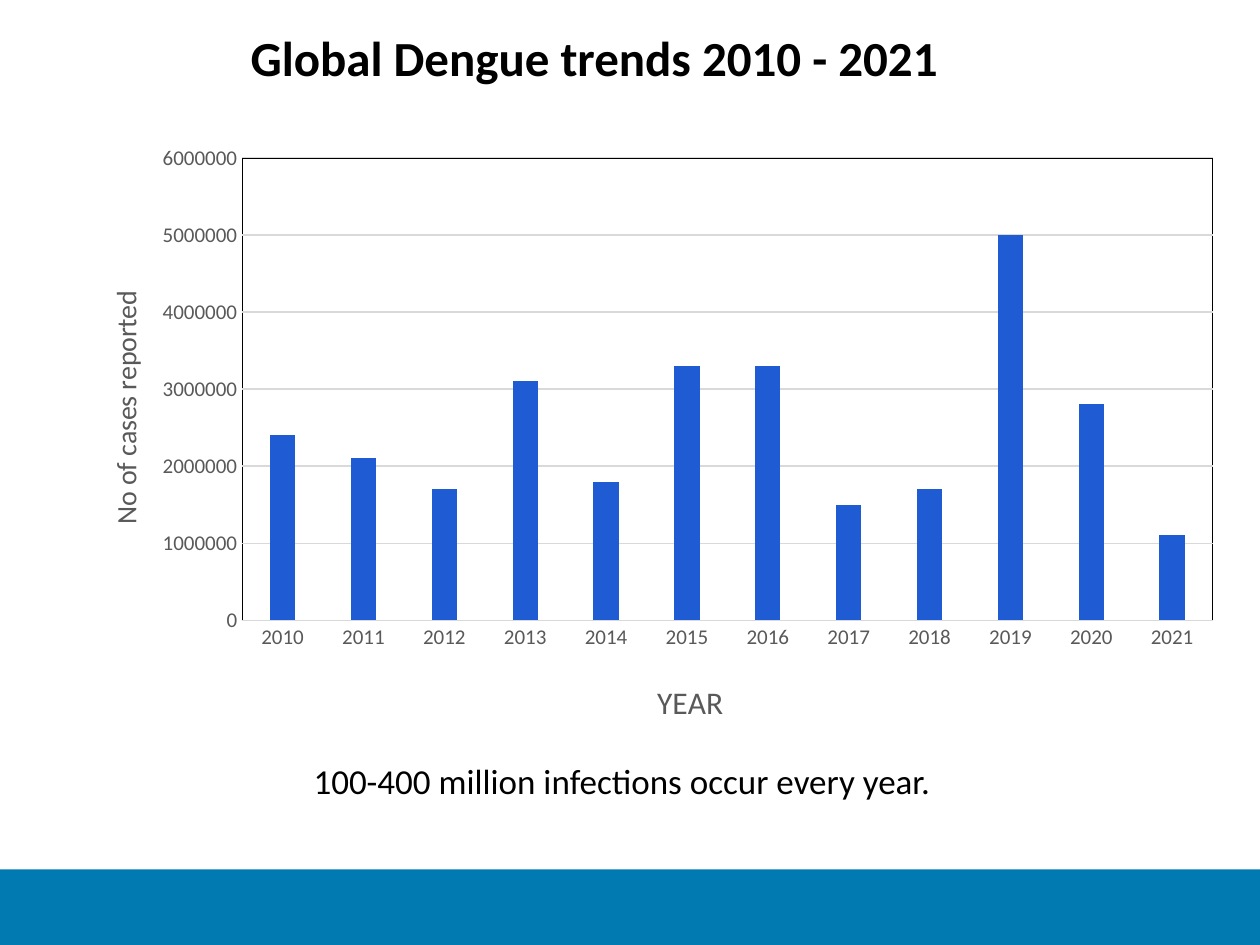
"""Build the slide on global dengue trends from 2010 to 2021."""
from lxml import etree
from pptx import Presentation
from pptx.chart.data import CategoryChartData
from pptx.dml.color import RGBColor
from pptx.enum.chart import XL_CHART_TYPE, XL_TICK_MARK
from pptx.enum.shapes import MSO_SHAPE
from pptx.enum.text import MSO_AUTO_SIZE, PP_ALIGN
from pptx.oxml import parse_xml
from pptx.oxml.ns import nsdecls, qn
from pptx.util import Inches, Pt

COLUMN = XL_CHART_TYPE.COLUMN_CLUSTERED
NONE = XL_TICK_MARK.NONE
RECT = MSO_SHAPE.RECTANGLE
GROW = MSO_AUTO_SIZE.SHAPE_TO_FIT_TEXT
LEFT, CENTER = PP_ALIGN.LEFT, PP_ALIGN.CENTER

FONT = "Calibri"
COLORS = {"band": "007AB0", "bar": "1F5BD3", "grid": "D9D9D9",
          "label": "595959", "text": "000000"}
TITLE = "Global Dengue trends 2010 - 2021"
NOTE = "100-400 million infections occur every year."
YEARS = [str(year) for year in range(2010, 2022)]
CASES = [2400000, 2100000, 1700000, 3100000, 1800000, 3300000,
         3300000, 1500000, 1700000, 5000000, 2800000, 1100000]
PLOT = {"x": 0.15, "y": 0.04, "w": 0.83, "h": 0.76}


def color(name):
    return RGBColor.from_string(COLORS[name])


def style(font, size, tone="text", bold=False):
    font.name, font.size, font.bold = FONT, Pt(size), bold
    font.color.rgb = color(tone)


def add_text(slide, text, box, size, bold=False, align=LEFT, wrap=True):
    frame = slide.shapes.add_textbox(*map(Inches, box)).text_frame
    frame.word_wrap, frame.auto_size = wrap, GROW
    para = frame.paragraphs[0]
    para.alignment = align
    run = para.add_run()
    run.text = text
    style(run.font, size, bold=bold)


def layout(spots, inner=False):
    root = parse_xml(f"<c:layout {nsdecls('c')}><c:manualLayout/></c:layout>")
    rules = [("layoutTarget", "inner")] if inner else []
    rules += [("xMode", "edge"), ("yMode", "edge"), *spots.items()]
    for tag, val in rules:
        etree.SubElement(root[0], qn(f"c:{tag}")).set("val", str(val))
    return root


def set_axis(axis, text, size, spot):
    axis.major_tick_mark = axis.minor_tick_mark = NONE
    style(axis.tick_labels.font, 12, "label")
    title = axis.axis_title
    para = title.text_frame.paragraphs[0]
    run = para.add_run()
    run.text = text
    style(run.font, size, "label")
    node = title._element
    for old in node.findall(qn("c:layout")):
        node.remove(old)
    node.find(qn("c:tx")).addnext(layout(spot))


def add_cases(slide):
    data = CategoryChartData()
    data.categories = YEARS
    data.add_series("Series 1", CASES)
    box = map(Inches, (0.53, 1.06, 9.28, 4.83))
    chart = slide.shapes.add_chart(COLUMN, *box, data).chart
    chart.has_legend = chart.has_title = False
    style(chart.font, 10)
    plot = chart.plots[0]
    plot.gap_width, plot.overlap, plot.vary_by_categories = 219, -27, False
    fill = plot.series[0].format.fill
    fill.solid()
    fill.fore_color.rgb = color("bar")

    years, cases = chart.category_axis, chart.value_axis
    set_axis(years, "YEAR", 18, {"x": 0.5, "y": 0.89})
    set_axis(cases, "No of cases reported", 16, {"x": 0.03, "y": 0.25})
    cases.minimum_scale, cases.maximum_scale = 0, 6000000
    cases.major_unit = 1000000
    cases.tick_labels.number_format = "0"
    cases.tick_labels.number_format_is_linked = False
    cases.format.line.fill.background()
    for line in (years.format.line, cases.major_gridlines.format.line):
        line.color.rgb, line.width = color("grid"), Pt(0.75)

    area = chart._chartSpace.chart.plotArea
    for old in area.findall(qn("c:layout")):
        area.remove(old)
    area.insert(0, layout(PLOT, inner=True))
    area.append(parse_xml(
        f"<c:spPr {nsdecls('c', 'a')}><a:noFill/><a:ln w='9525'><a:solidFill>"
        f"<a:srgbClr val='{COLORS['text']}'/></a:solidFill></a:ln></c:spPr>"))


def main():
    deck = Presentation()
    deck.slide_width, deck.slide_height = Inches(10), Inches(7.5)
    slide = deck.slides.add_slide(deck.slide_layouts[6])
    band = slide.shapes.add_shape(RECT, 0, Inches(6.9), Inches(10), Inches(0.6))
    band.shadow.inherit = False
    band.fill.solid()
    band.fill.fore_color.rgb = color("band")
    band.line.fill.background()
    add_cases(slide)
    add_text(slide, NOTE, (2.39, 5.98, 5.21, 0.44), 20, wrap=False)
    add_text(slide, TITLE, (0.33, 0.17, 8.77, 1.04), 28, bold=True, align=CENTER)
    deck.save("out.pptx")


if __name__ == "__main__":
    main()
